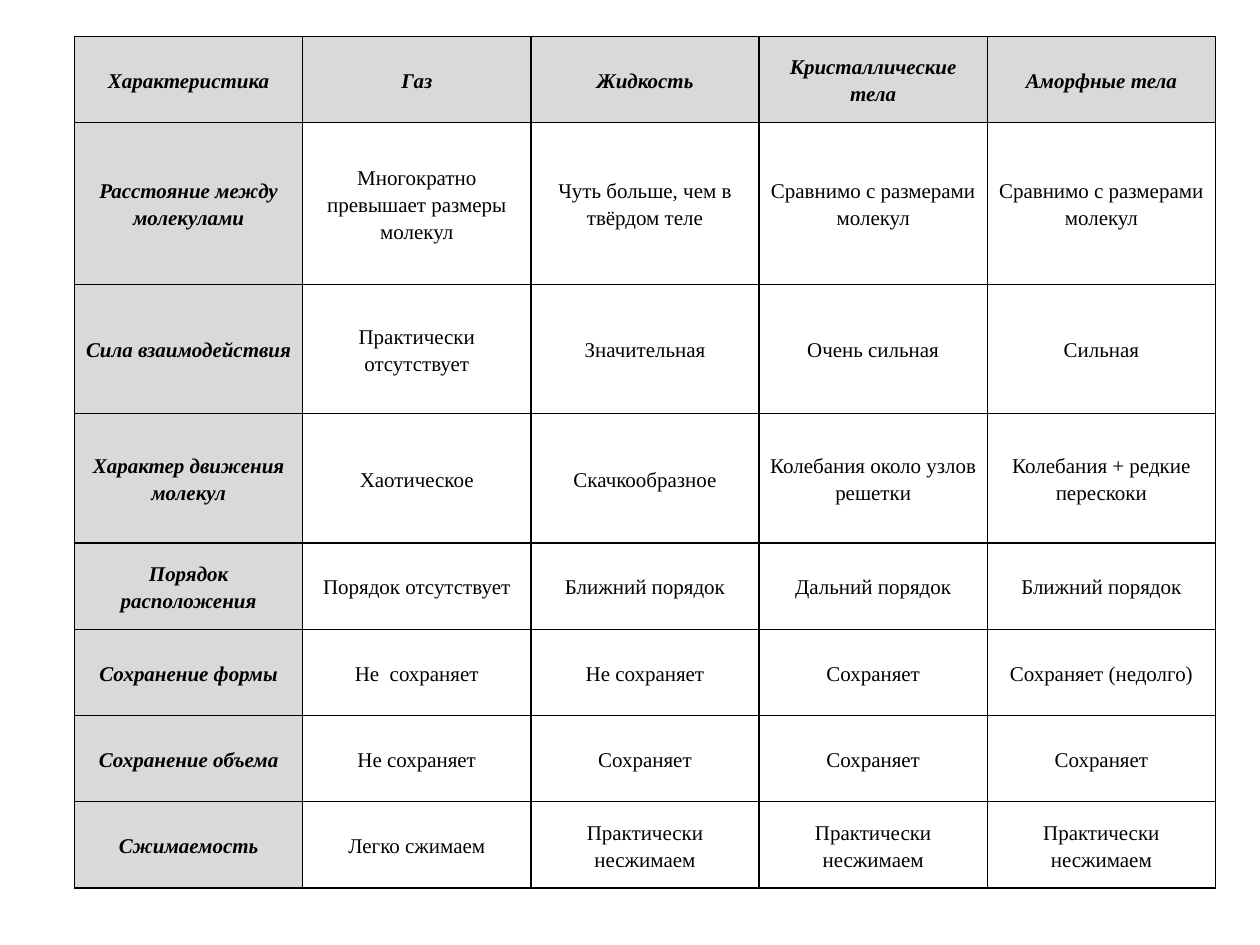
import pptx
import pptx.dml.color
import pptx.enum.text
import pptx.oxml
import pptx.oxml.ns
import pptx.util

Pt = pptx.util.Pt
BLACK = "000000"
HEADING_GREY = "D9D9D9"
ROW_WEIGHTS = [8, 15, 12, 12, 8, 8, 8, 8]
PROPERTIES = [
    ["Характеристика", "Газ", "Жидкость", "Кристаллические тела", "Аморфные тела"],
    ["Расстояние между молекулами", "Многократно превышает размеры молекул",
     "Чуть больше, чем в твёрдом теле", "Сравнимо с размерами молекул",
     "Сравнимо с размерами молекул"],
    ["Сила взаимодействия", "Практически отсутствует", "Значительная",
     "Очень сильная", "Сильная"],
    ["Характер движения молекул", "Хаотическое", "Скачкообразное",
     "Колебания около узлов решетки", "Колебания + редкие перескоки"],
    ["Порядок расположения", "Порядок отсутствует", "Ближний порядок",
     "Дальний порядок", "Ближний порядок"],
    ["Сохранение формы", "Не  сохраняет", "Не сохраняет", "Сохраняет",
     "Сохраняет (недолго)"],
    ["Сохранение объема", "Не сохраняет", "Сохраняет", "Сохраняет", "Сохраняет"],
    ["Сжимаемость", "Легко сжимаем", "Практически несжимаем",
     "Практически несжимаем", "Практически несжимаем"],
]


def rgb(colour):
    """Turn a hex string into a colour."""
    return pptx.dml.color.RGBColor.from_string(colour)


def add_borders(cell, colour, width):
    """Draw a solid line on all four sides of a cell."""
    properties = cell._tc.get_or_add_tcPr()
    for position, side in enumerate(("lnL", "lnR", "lnT", "lnB")):
        border = pptx.oxml.parse_xml(
            f'<a:{side} {pptx.oxml.ns.nsdecls("a")} w="{Pt(width)}">'
            f'<a:solidFill><a:srgbClr val="{colour}"/></a:solidFill></a:{side}>')
        properties.insert(position, border)


def fill_cell(cell, wording, is_heading):
    """Write and format one cell of the comparison."""
    cell.margin_left = cell.margin_right = Pt(5)
    cell.margin_top = cell.margin_bottom = Pt(0)
    cell.vertical_anchor = pptx.enum.text.MSO_ANCHOR.MIDDLE
    if is_heading:
        cell.fill.solid()
        cell.fill.fore_color.rgb = rgb(HEADING_GREY)
    else:
        cell.fill.background()
    paragraph = cell.text_frame.paragraphs[0]
    paragraph.alignment = pptx.enum.text.PP_ALIGN.CENTER
    paragraph.line_spacing = 1.15
    run = paragraph.add_run()
    run.text = wording
    run.font.name = "Times New Roman"
    run.font.size = Pt(12)
    run.font.bold = run.font.italic = is_heading
    run.font.color.rgb = rgb(BLACK)
    add_borders(cell, BLACK, 1)


def add_comparison(slide, left, top, width, height):
    """Place the table of states of matter in the given box."""
    column_count = len(PROPERTIES[0])
    comparison = slide.shapes.add_table(
        len(PROPERTIES), column_count, Pt(left), Pt(top), Pt(width), Pt(height)).table
    comparison.horz_banding = False
    comparison.first_col = True
    for column in comparison.columns:
        column.width = Pt(width / column_count)
    for row, weight in zip(comparison.rows, ROW_WEIGHTS):
        row.height = Pt(height * weight / sum(ROW_WEIGHTS))
    for r, wordings in enumerate(PROPERTIES):
        for c, wording in enumerate(wordings):
            fill_cell(comparison.cell(r, c), wording, r == 0 or c == 0)


def main():
    """Build and save the slide."""
    deck = pptx.Presentation()
    deck.slide_width, deck.slide_height = Pt(720), Pt(540)
    slide = deck.slides.add_slide(deck.slide_layouts[6])
    add_comparison(slide, 42.6, 20.8, 652, 486.7)
    deck.save("out.pptx")


if __name__ == "__main__":
    main()
